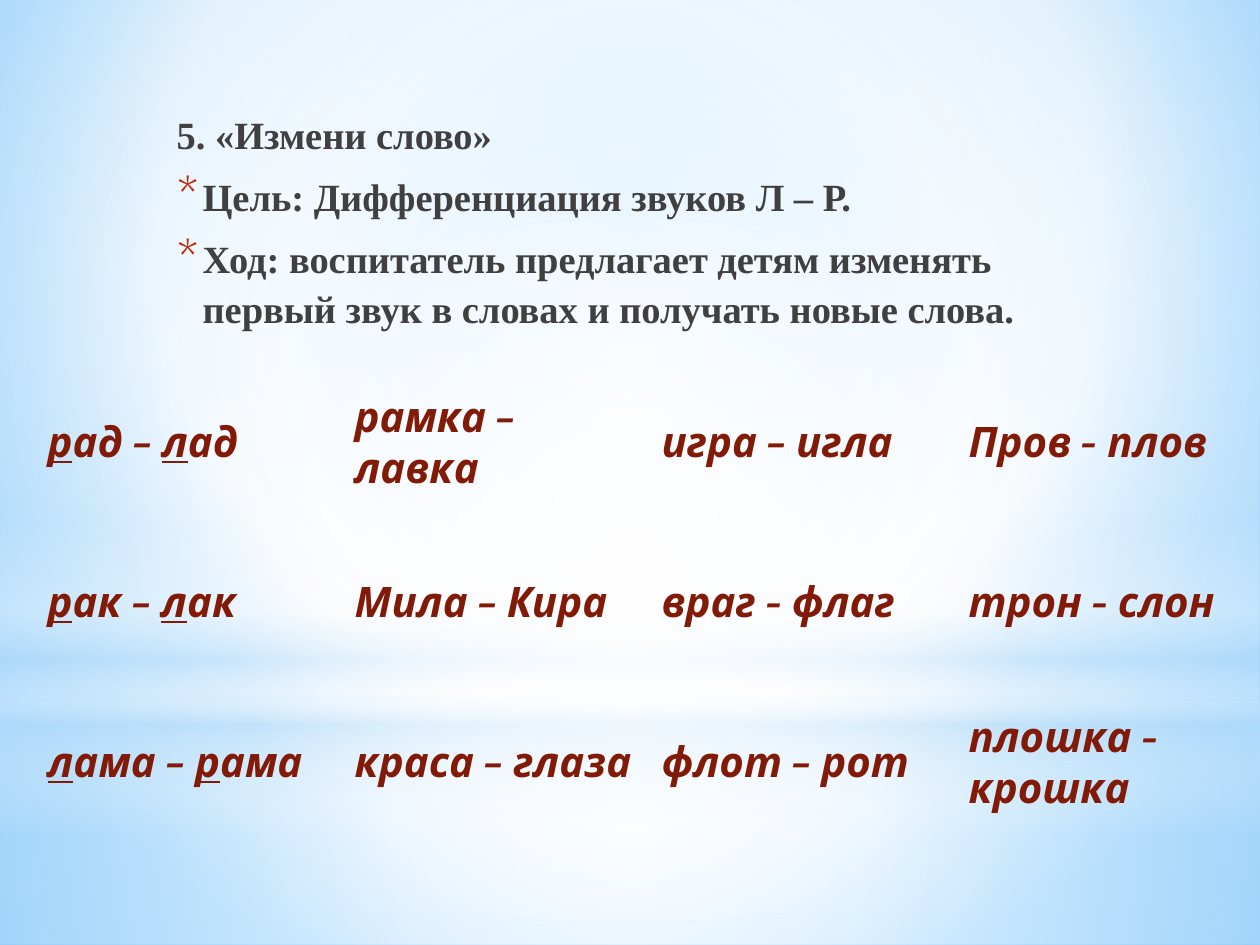
from lxml import etree
from pptx import Presentation
from pptx.dml.color import RGBColor
from pptx.enum.shapes import MSO_SHAPE as SHAPE
from pptx.enum.text import MSO_ANCHOR as ANCHOR, MSO_AUTO_SIZE as AUTO
from pptx.oxml import parse_xml
from pptx.oxml.ns import nsdecls, qn
from pptx.util import Pt

PX = 914400 // 126


def add_text(p, text, size, font, color, italic=False):
    for i, part in enumerate(text.split("_")):
        if part:
            r = p.add_run()
            r.text = part
            f = r.font
            f.size, f.name, f.bold, f.italic = Pt(size), font, True, italic
            f.underline = i % 2 == 1
            f.color.rgb = RGBColor.from_string(color)


def set_gradient(fill, parent, stops, rect=None):
    fill.solid()
    fill.fore_color.rgb = RGBColor.from_string("FFFFFF")
    gs = "".join(
        f'<a:gs pos="{pos * 1000}"><a:srgbClr val="{color}">'
        f'<a:alpha val="{alpha * 1000}"/></a:srgbClr></a:gs>'
        for pos, color, alpha in stops)
    if rect:
        l, t, r, b = (v * 1000 for v in rect)
        way = (f'<a:path path="circle"><a:fillToRect l="{l}" t="{t}" '
               f'r="{r}" b="{b}"/></a:path>')
    else:
        way = '<a:lin ang="5400000" scaled="0"/>'
    solid = parent.find(qn("a:solidFill"))
    parent.replace(solid, parse_xml(
        f'<a:gradFill {nsdecls("a")} rotWithShape="1">'
        f'<a:gsLst>{gs}</a:gsLst>{way}</a:gradFill>'))


prs = Presentation()
prs.slide_width, prs.slide_height = 1260 * PX, 945 * PX
s = prs.slides.add_slide(prs.slide_layouts[1])
s.shapes.title.element.getparent().remove(s.shapes.title.element)
body = s.placeholders[1]

fill = s.background.fill
fill.solid()
set_gradient(fill, s.element.find(".//" + qn("p:bgPr")),
             [(0, "9ED5FF", 100), (60, "FFFFFF", 100), (100, "5BB9FF", 100)],
             (20, 10, 20, 60))

CENTER = (50, 50, 50, 50)
glows = [
    (SHAPE.RECTANGLE, 703, 242, CENTER,
     [(0, "FFFFFF", 91), (37, "FFFFFF", 76), (100, "B4DCFA", 79)]),
    (SHAPE.RECTANGLE, 0, 703, CENTER,
     [(0, "FFFFFF", 89), (48, "FFFFFF", 62), (100, "B4DCFA", 79)]),
    (SHAPE.RECTANGLE, 519, 315, None,
     [(0, "FFFFFF", 0), (29, "FFFFFF", 30), (45, "B4DCFA", 40),
      (55, "FFFFFF", 26), (65, "B4DCFA", 60), (100, "FFFFFF", 0)]),
    (SHAPE.OVAL, 220, 703, CENTER,
     [(0, "FFFFFF", 100), (56, "FFFFFF", 0)]),
]
for kind, top, height, rect, stops in glows:
    sp = s.shapes.add_shape(kind, 0, top * PX, 1260 * PX, height * PX)
    sp.shadow.inherit = False
    sp.line.fill.background()
    set_gradient(sp.fill, sp.element.spPr, stops, rect)
    body.element.addprevious(sp.element)

body.left, body.top, body.width, body.height = (
    v * PX for v in (158, 101, 882, 479))
tf = body.text_frame
tf.word_wrap = True
tf.auto_size = AUTO.NONE
tf.vertical_anchor = ANCHOR.TOP
lines = [
    ("5. «Измени слово»", False),
    ("Цель: Дифференциация звуков Л – Р.", True),
    ("Ход: воспитатель предлагает детям изменять первый звук в словах "
     "и получать новые слова.", True),
]
for i, (text, bullet) in enumerate(lines):
    p = tf.add_paragraph() if i else tf.paragraphs[0]
    add_text(p, text, 22, "Times New Roman", "404040")
    p.line_spacing = 1.07
    p.space_before, p.space_after = Pt(4.4), Pt(3)
    pPr = p._p.get_or_add_pPr()
    pPr.set("marL", str((32 if bullet else 6) * PX))
    pPr.set("indent", str((-25 if bullet else 0) * PX))
    if bullet:
        color = etree.SubElement(pPr, qn("a:buClr"))
        etree.SubElement(color, qn("a:srgbClr"), val="C3260C")
        etree.SubElement(pPr, qn("a:buSzPct"), val="130000")
        etree.SubElement(pPr, qn("a:buFont"), typeface="Cabin")
        etree.SubElement(pPr, qn("a:buChar"), char="*")
    else:
        etree.SubElement(pPr, qn("a:buNone"))

words = [
    ["_р_ад – _л_ад", "рамка –лавка", "игра – игла", "Пров - плов"],
    ["_р_ак – _л_ак", "Мила – Кира", "враг - флаг", "трон - слон"],
    ["_л_ама – _р_ама", "краса – глаза", "флот – рот", "плошка - крошка"],
]
frame = s.shapes.add_table(3, 4, 35 * PX, 363 * PX, 1228 * PX, 480 * PX)
table = frame.table
table.first_row = table.horz_banding = False
style = table._tbl.tblPr.find(qn("a:tableStyleId"))
style.text = "{2D5ABB26-0587-4C30-8999-92F81FD0307C}"
for row, texts in zip(table.rows, words):
    for cell, text in zip(row.cells, texts):
        cell.fill.background()
        cell.vertical_anchor = ANCHOR.MIDDLE
        add_text(cell.text_frame.paragraphs[0], text, 24, "Cabin", "821A08",
                 italic=True)

prs.save("out.pptx")
